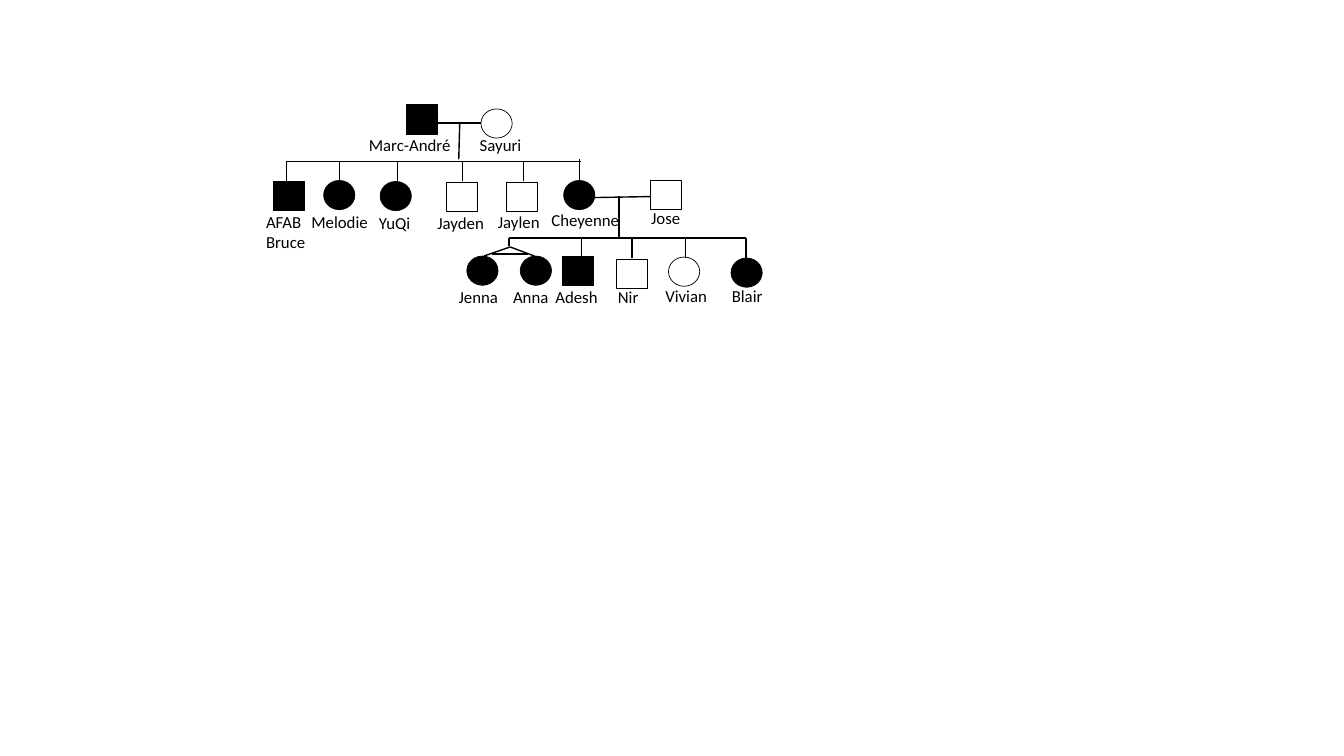
"""Draw a three-generation family pedigree on one slide."""
from dataclasses import dataclass

from pptx import Presentation
from pptx.dml.color import RGBColor
from pptx.enum.shapes import MSO_CONNECTOR as Link, MSO_SHAPE as Kind
from pptx.enum.text import MSO_AUTO_SIZE as Fit
from pptx.oxml.ns import qn
from pptx.slide import Slide
from pptx.util import Emu, Pt

SCALE = 9144
BLACK = RGBColor(0, 0, 0)
FONT = "Calibri"
WIDE, HIGH = 31, 29
MALE, FEMALE = Kind.RECTANGLE, Kind.OVAL


@dataclass(frozen=True)
class Person:
    name: str
    kind: Kind
    dark: bool
    left: int
    top: int
    text_x: int
    text_y: int
    text_w: int
    text_h: int = 30


@dataclass(frozen=True)
class Line:
    x1: int
    y1: int
    x2: int
    y2: int


PEOPLE = [
    Person("Marc-André", MALE, True, 403, 104, 356, 129, 129),
    Person("Sayuri", FEMALE, False, 477, 108, 466, 129, 73),
    Person("AFAB\vBruce", MALE, True, 271, 180, 254, 205, 65, 50),
    Person("Melodie", FEMALE, True, 321, 179, 299, 205, 84),
    Person("YuQi", FEMALE, True, 377, 180, 366, 206, 63),
    Person("Jayden", MALE, False, 443, 181, 424, 206, 70),
    Person("Jaylen", MALE, False, 502, 181, 484, 205, 70),
    Person("Cheyenne", FEMALE, True, 559, 179, 537, 203, 109),
    Person("Jose", MALE, False, 645, 179, 636, 201, 86),
    Person("Jenna", FEMALE, True, 463, 254, 445, 280, 65),
    Person("Anna", FEMALE, True, 516, 254, 499, 280, 65),
    Person("Adesh", MALE, True, 558, 254, 541, 280, 75),
    Person("Nir", MALE, False, 611, 257, 603, 280, 63),
    Person("Vivian", FEMALE, False, 663, 255, 650, 279, 67),
    Person("Blair", FEMALE, True, 725, 256, 716, 279, 53),
]

COUPLES = [
    Line(434, 122, 477, 122),
    Line(455, 158, 456, 121),
    Line(590, 196, 645, 195),
    Line(614, 236, 614, 194),
]
BARS = [Line(284, 160, 576, 160), Line(505, 236, 740, 236)]
TWINS = [
    Line(505, 244, 505, 236),
    Line(480, 254, 506, 245),
    Line(530, 254, 506, 245),
    Line(488, 252, 524, 252),
]
DROPS = [Line(x, 180, x, 160) for x in (284, 337, 394, 459, 519)]
DROPS += [Line(575, 179, 575, 158)]
DROPS += [Line(x, 256, x, 236) for x in (577, 627, 680, 740)]


def px(size: int) -> Emu:
    """Turn px into EMU."""
    return Emu(size * SCALE)


def draw_line(slide: Slide, line: Line) -> None:
    """Draw one line of descent or marriage."""
    ends = map(px, (line.x1, line.y1, line.x2, line.y2))
    link = slide.shapes.add_connector(Link.STRAIGHT, *ends)
    link.line.color.rgb = BLACK
    link.line.width = Pt(1)
    props = link._element.spPr
    props.append(props.makeelement(qn("a:effectLst"), {}))


def draw_person(slide: Slide, person: Person) -> None:
    """Draw the symbol and the name of a person."""
    box = map(px, (person.left, person.top, WIDE, HIGH))
    mark = slide.shapes.add_shape(person.kind, *box)
    mark.shadow.inherit = False
    mark.line.color.rgb = BLACK
    mark.line.width = Pt(0.5)
    if person.dark:
        mark.fill.solid()
        mark.fill.fore_color.rgb = BLACK
    else:
        mark.fill.background()

    area = map(px, (person.text_x, person.text_y, person.text_w, person.text_h))
    frame = slide.shapes.add_textbox(*area).text_frame
    frame.word_wrap = True
    frame.auto_size = Fit.SHAPE_TO_FIT_TEXT
    label = frame.paragraphs[0]
    label.text = person.name
    label.font.name = FONT
    label.font.size = Pt(12)
    label.font.color.rgb = BLACK


def main() -> None:
    """Build and save the slide."""
    deck = Presentation()
    deck.slide_width, deck.slide_height = px(1333), px(750)
    slide = deck.slides.add_slide(deck.slide_layouts[6])
    for line in COUPLES + BARS + TWINS + DROPS:
        draw_line(slide, line)
    for person in PEOPLE:
        draw_person(slide, person)
    deck.save("out.pptx")


if __name__ == "__main__":
    main()
